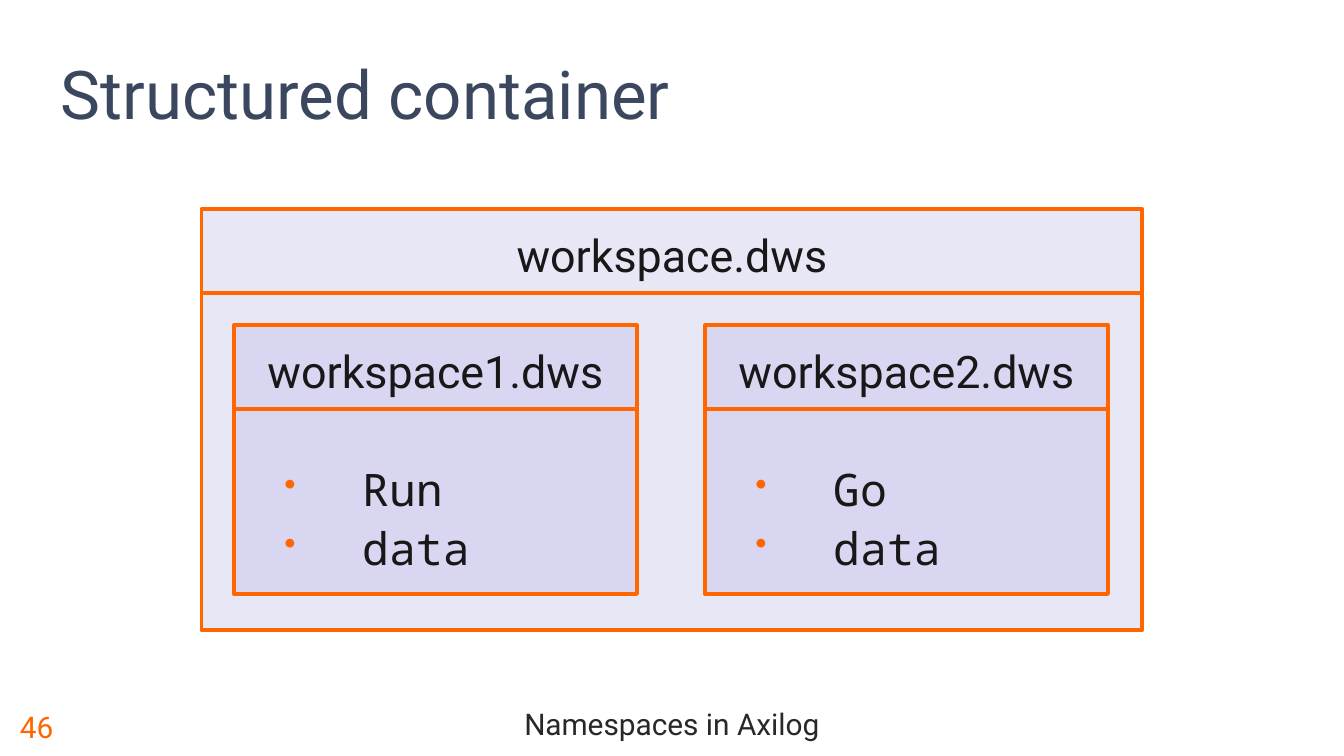
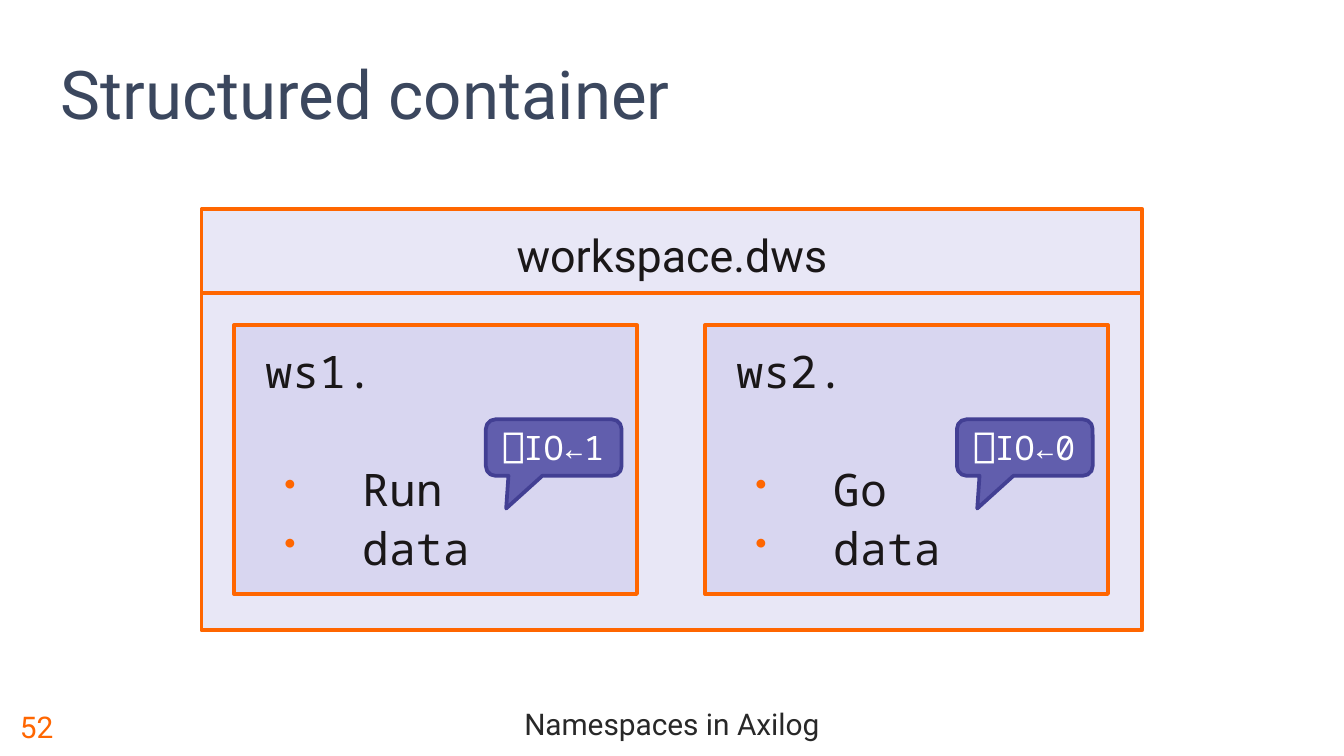
from lxml import etree
from pptx import Presentation
from pptx.dml.color import RGBColor
from pptx.enum.shapes import MSO_CONNECTOR, MSO_SHAPE
from pptx.enum.text import MSO_ANCHOR, PP_ALIGN
from pptx.oxml.ns import qn
from pptx.util import Pt

SCALE = 4572  # EMU per px, 200 px to the inch
WIDE, HIGH = 2000, 1125
RECT, CALL = MSO_SHAPE.RECTANGLE, MSO_SHAPE.ROUNDED_RECTANGULAR_CALLOUT
STRAIGHT = MSO_CONNECTOR.STRAIGHT
TOP, MID, LOW = MSO_ANCHOR.TOP, MSO_ANCHOR.MIDDLE, MSO_ANCHOR.BOTTOM
LEFT, MIDDLE = PP_ALIGN.LEFT, PP_ALIGN.CENTER
SANS, MONO = "Roboto", "Noto Sans Mono"
ORANGE, NAVY, INK, GREY = "FF6600", "3B475E", "1A1718", "282828"
LILAC, PURPLE, INDIGO, WHITE = "B4B2E3", "615EAD", "423F93", "FFFFFF"

HEAD = 125  # height of a header band
OUTER = (300, 311, 1400, 627)
INNER = (48, 173, 600, 400)  # first inner box, relative to the outer one
STEP = 701
ITEMS = (("Run", "data"), ("Go", "data"))


def px(*values):
    return [value * SCALE for value in values]


def color(code):
    return RGBColor.from_string(code)


def add(parent, tag, **attrs):
    node = etree.SubElement(parent, qn(tag))
    for key, value in attrs.items():
        node.set(key, value)
    return node


def write(frame, text, new=False, size=24, font=SANS, ink=INK, align=LEFT,
          space=None, before=0, margin=0, bullet=False):
    """Write one paragraph; new starts another one after the first."""
    para = frame.add_paragraph() if new else frame.paragraphs[0]
    para.alignment = align
    if space:
        para.line_spacing = space
    if before:
        para.space_before = Pt(before)
    props = para._p.get_or_add_pPr()
    if margin:
        props.set("marL", str(margin * SCALE))
    if bullet:
        props.set("indent", str(-116 * SCALE))
        add(add(props, "a:buClr"), "a:srgbClr", val=ORANGE)
        add(props, "a:buSzPct", val="75000")
        add(props, "a:buChar", char="•")
    run = para.add_run()
    run.text = text
    run.font.size = Pt(size)
    run.font.name = font
    run.font.color.rgb = color(ink)


def label(slide, box, text, anchor=MID, **style):
    frame = slide.shapes.add_textbox(*px(*box)).text_frame
    frame.word_wrap = True
    frame.vertical_anchor = anchor
    write(frame, text, **style)


def block(slide, kind, box, fill, edge):
    shape = slide.shapes.add_shape(kind, *px(*box))
    shape.shadow.inherit = False
    shape.fill.solid()
    shape.fill.fore_color.rgb = color(fill)
    shape.line.color.rgb = color(edge)
    shape.line.width = Pt(2)
    return shape


def panel(slide, box):
    """Draw a translucent box and return its text frame."""
    shape = block(slide, RECT, box, LILAC, ORANGE)
    tint = shape.fill._xPr.find(qn("a:solidFill"))[0]
    add(tint, "a:alpha", val="30000")
    frame = shape.text_frame
    frame.word_wrap = True
    frame.vertical_anchor = TOP
    frame.margin_left = frame.margin_right = frame.margin_bottom = 0
    frame.margin_top = 20 * SCALE
    return frame


def rule(slide, box):
    """Draw the line below the header of a box."""
    x, y, w, _ = box
    line = slide.shapes.add_connector(
        STRAIGHT, *px(x, y + HEAD, x + w, y + HEAD))
    line.line.color.rgb = color(ORANGE)
    line.line.width = Pt(2)
    add(line._element.spPr, "a:effectLst")


def listing(frame, items):
    for i, item in enumerate(items):
        write(frame, item, new=True, font=MONO, space=1.1,
              before=0 if i else 31.5, margin=191, bullet=True)


def file_box(slide, box, name, items):
    frame = panel(slide, box)
    write(frame, name, align=MIDDLE, space=1.1)
    listing(frame, items)
    rule(slide, box)


def space_box(slide, box, name, items):
    frame = panel(slide, box)
    write(frame, name, font=MONO, space=1.1, margin=47)
    listing(frame, items)


def bubble(slide, box, text):
    x, y, _, _ = box
    shape = block(slide, CALL, (x + 375, y + 140, 202, 84), PURPLE, INDIGO)
    for i, value in enumerate((-0.35, 1.08, 0.17)):
        shape.adjustments[i] = value
    frame = shape.text_frame
    frame.word_wrap = False
    frame.vertical_anchor = MID
    write(frame, text, size=18, font=MONO, ink=WHITE, align=MIDDLE)


def base(deck, number):
    """Add a slide with footer, title and the outer workspace box."""
    slide = deck.slides.add_slide(deck.slide_layouts[6])
    label(slide, (0, 1038, WIDE, 87), "Namespaces in Axilog",
          size=16, ink=GREY, align=MIDDLE, space=0.8)
    label(slide, (10, 1038, 146, 87), number, size=16, ink=ORANGE)
    label(slide, (71, 58, 1532, 150), "Structured container",
          anchor=LOW, size=36, ink=NAVY)
    write(panel(slide, OUTER), "workspace.dws", align=MIDDLE, space=1.1)
    rule(slide, OUTER)
    return slide


def inner(i):
    x, y, w, h = INNER
    return OUTER[0] + x + i * STEP, OUTER[1] + y, w, h


def files(deck):
    slide = base(deck, "46")
    for i, items in enumerate(ITEMS):
        file_box(slide, inner(i), f"workspace{i + 1}.dws", items)


def spaces(deck):
    slide = base(deck, "52")
    for i, items in enumerate(ITEMS):
        space_box(slide, inner(i), f"ws{i + 1}.", items)
    for i in range(len(ITEMS)):
        bubble(slide, inner(i), f"⎕IO←{1 - i}")


def main():
    deck = Presentation()
    deck.slide_width, deck.slide_height = px(WIDE, HIGH)
    files(deck)
    spaces(deck)
    deck.save("out.pptx")


if __name__ == "__main__":
    main()
